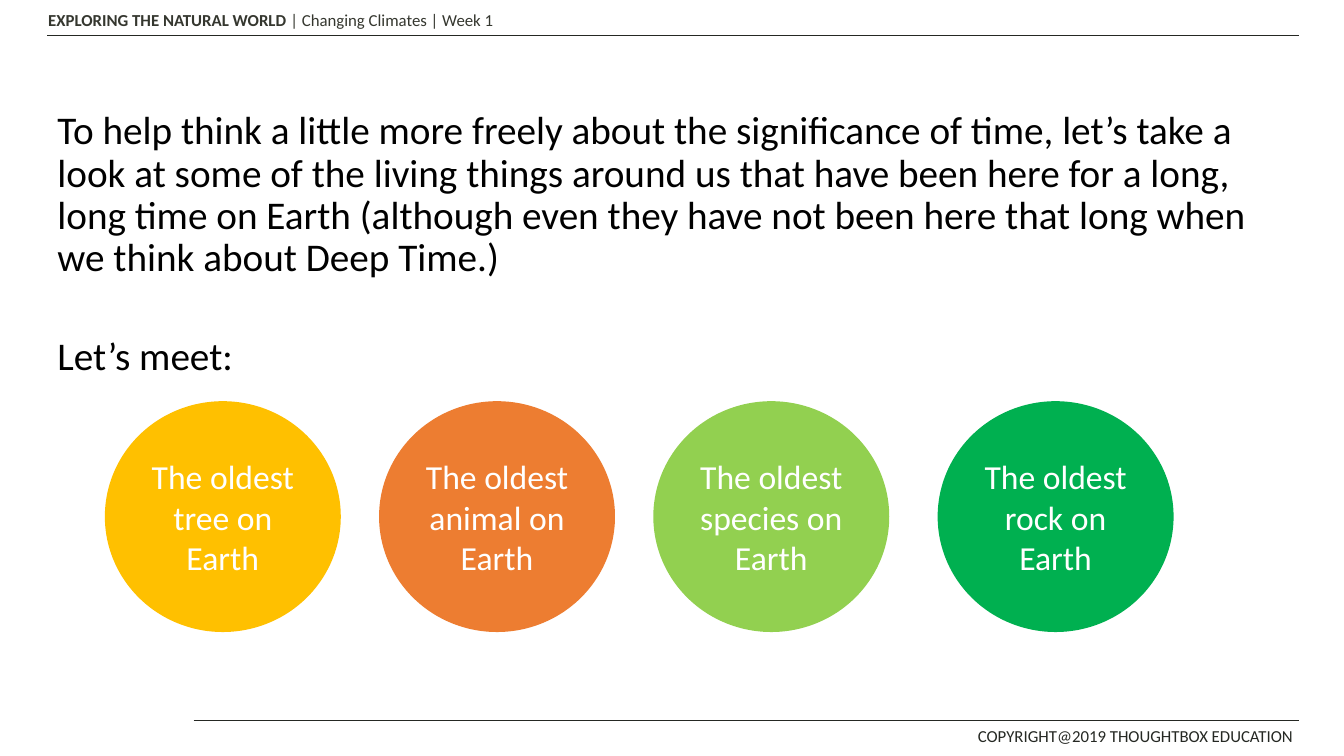
from dataclasses import dataclass

from lxml.etree import SubElement
from pptx import Presentation
from pptx.dml.color import RGBColor
from pptx.enum.shapes import MSO_CONNECTOR, MSO_SHAPE
from pptx.enum.text import MSO_ANCHOR, MSO_AUTO_SIZE, PP_ALIGN
from pptx.oxml.ns import qn
from pptx.slide import Slide
from pptx.text.text import Font
from pptx.util import Emu, Pt

EMU_PER_PX = 9144
COLORS = {
    "black": "000000", "white": "FFFFFF", "ink": "252823", "header": "35372F",
    "amber": "FFC000", "orange": "ED7D31", "lime": "92D050", "green": "00B050",
}
INTRO = (
    "To help think a little more freely about the significance of time, let’s take a "
    "look at some of the living things around us that have been here for a long, long "
    "time on Earth (although even they have not been here that long when we think "
    "about Deep Time.)"
)


@dataclass
class Rule:
    left: int
    right: int
    top: int


@dataclass
class Label:
    left: int
    top: int
    width: int
    height: int
    color: str
    spans: list[tuple[str, bool]]


@dataclass
class Circle:
    left: int
    color: str
    text: str


RULES = [Rule(47, 1288, 35), Rule(192, 1288, 715)]
LABELS = [
    Label(38, 5, 477, 30, "header",
          [("EXPLORING THE NATURAL WORLD ", True), ("| Changing Climates | Week 1", False)]),
    Label(960, 715, 340, 31, "ink", [("COPYRIGHT@2019 THOUGHTBOX EDUCATION", False)]),
]
CIRCLES = [
    Circle(104, "amber", "The oldest tree on Earth"),
    Circle(376, "orange", "The oldest animal on Earth"),
    Circle(648, "lime", "The oldest species on Earth"),
    Circle(930, "green", "The oldest rock on Earth"),
]


def px(length: int) -> Emu:
    """Turn pixels into EMU."""
    return Emu(length * EMU_PER_PX)


def rgb(name: str) -> RGBColor:
    """Look up a named colour."""
    return RGBColor.from_string(COLORS[name])


def style(font: Font, size: int, color: str, bold: bool = False) -> None:
    """Set the typeface, size, colour and weight of a font."""
    font.name, font.size, font.bold = "Calibri", Pt(size), bold
    font.color.rgb = rgb(color)


def draw_rule(page: Slide, rule: Rule) -> None:
    """Draw a thin horizontal line."""
    line = page.shapes.add_connector(
        MSO_CONNECTOR.STRAIGHT, px(rule.left), px(rule.top), px(rule.right), px(rule.top))
    line.line.color.rgb = rgb("ink")
    line.line.width = Pt(1)
    SubElement(line._element.spPr, qn("a:effectLst"))


def draw_label(page: Slide, label: Label) -> None:
    """Draw a header or footer label."""
    box = page.shapes.add_textbox(
        px(label.left), px(label.top), px(label.width), px(label.height))
    box.text_frame.word_wrap = True
    para = box.text_frame.paragraphs[0]
    for text, bold in label.spans:
        span = para.add_run()
        span.text = text
        style(span.font, 12, label.color, bold)


def draw_circle(page: Slide, circle: Circle) -> None:
    """Draw a filled circle with centred text."""
    shape = page.shapes.add_shape(
        MSO_SHAPE.OVAL, px(circle.left), px(398), px(234), px(229))
    shape.shadow.inherit = False
    shape.fill.solid()
    shape.fill.fore_color.rgb = rgb(circle.color)
    shape.line.fill.background()
    frame = shape.text_frame
    frame.text = circle.text
    frame.word_wrap = True
    frame.vertical_anchor = MSO_ANCHOR.MIDDLE
    para = frame.paragraphs[0]
    para.alignment = PP_ALIGN.CENTER
    style(para.runs[0].font, 24, "white")


def fill_body(page: Slide) -> None:
    """Place the introduction in the body placeholder."""
    body = page.placeholders[1]
    body.left, body.top, body.width, body.height = px(47), px(105), px(1240), px(476)
    frame = body.text_frame
    frame.text = f"{INTRO}\nLet’s meet:"
    frame.word_wrap = True
    frame.auto_size = MSO_AUTO_SIZE.NONE
    frame.vertical_anchor = MSO_ANCHOR.TOP
    for para, gap in zip(frame.paragraphs, (0, 40)):
        properties = para._p.get_or_add_pPr()
        properties.set("marL", "0")
        properties.set("indent", "0")
        SubElement(properties, qn("a:buNone"))
        para.line_spacing = 0.9
        para.space_before = Pt(gap)
        style(para.runs[0].font, 28, "black")


def main() -> None:
    """Build and save the slide."""
    deck = Presentation()
    deck.slide_width, deck.slide_height = px(1333), px(750)
    page = deck.slides.add_slide(deck.slide_layouts[1])
    title = page.shapes.title._element
    title.getparent().remove(title)
    for rule in RULES:
        draw_rule(page, rule)
    for label in LABELS:
        draw_label(page, label)
    fill_body(page)
    for circle in CIRCLES:
        draw_circle(page, circle)
    deck.save("out.pptx")


if __name__ == "__main__":
    main()
